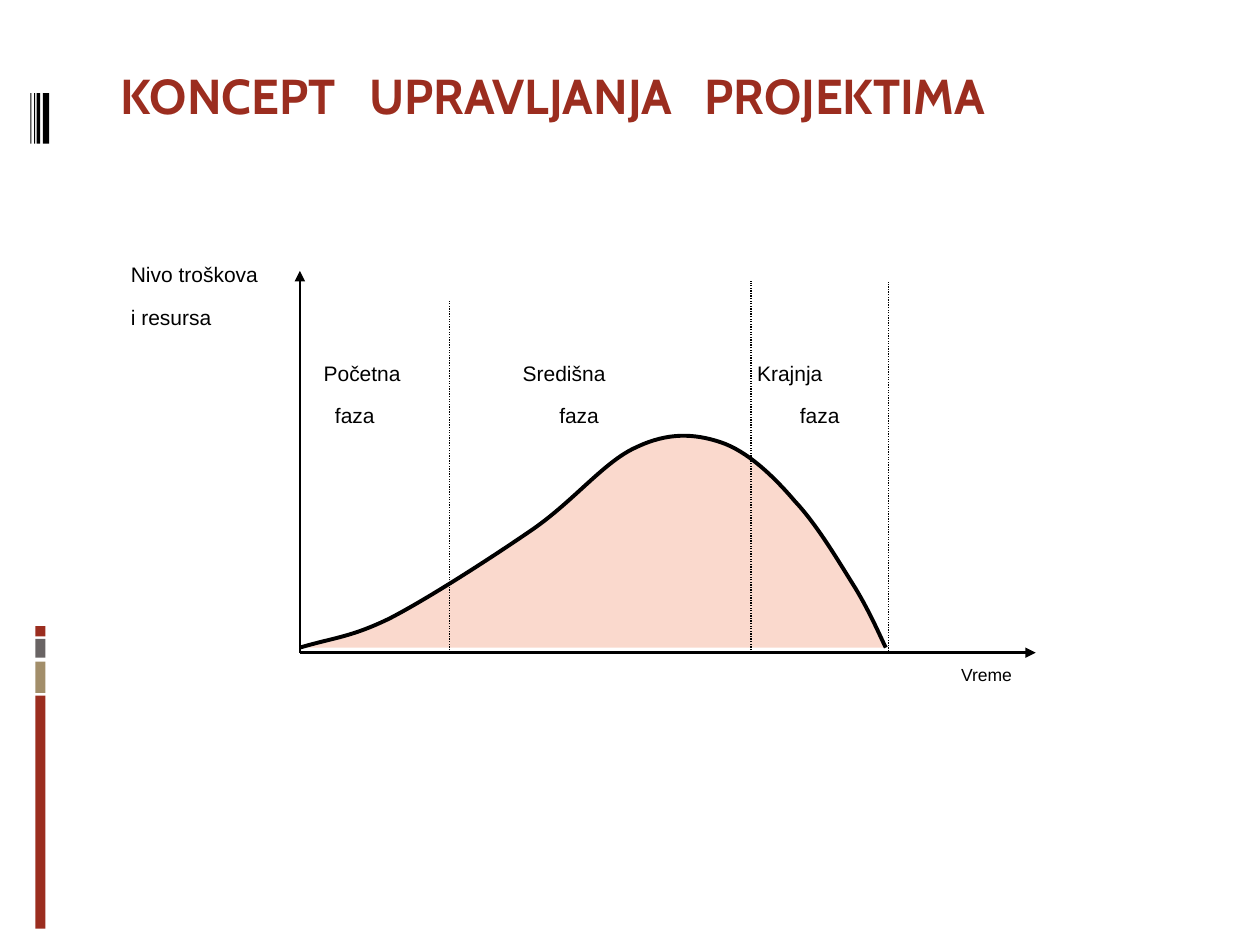
from lxml import etree
from pptx import Presentation
from pptx.dml.color import RGBColor
from pptx.enum import dml, shapes, text
from pptx.oxml import ns
from pptx.util import Inches, Pt

COLORS = {"red": "9B2D1F", "tan": "A28E6A", "gray": "696464",
          "black": "000000", "peach": "FAD9CD"}


def color(name):
    return RGBColor.from_string(COLORS[name])


def sub(node, tag, **attrs):
    return etree.SubElement(node, ns.qn(tag), **attrs)


class Page:
    font = "Arial"
    head = "Cabin"

    def __init__(self, deck):
        self.slide = deck.slides.add_slide(deck.slide_layouts[5])
        self.items = self.slide.shapes

    def fill_in(self, para, words, size, font, name="black", bold=False, tabs=()):
        para.alignment = text.PP_ALIGN.LEFT
        if tabs:
            stops = sub(para._p.get_or_add_pPr(), "a:tabLst")
            for stop in tabs:
                sub(stops, "a:tab", pos=str(Inches(stop)), algn="l")
        run = para.add_run()
        run.text = words
        run.font.size = Pt(size)
        run.font.name = font
        run.font.bold = bold
        run.font.color.rgb = color(name)

    def title(self, box, words, tabs):
        item = self.items.title
        item.left, item.top, item.width, item.height = map(Inches, box)
        frame = item.text_frame
        frame.auto_size = text.MSO_AUTO_SIZE.NONE
        frame.vertical_anchor = text.MSO_ANCHOR.TOP
        self.fill_in(frame.paragraphs[0], words, 28, self.head, "red", True, tabs)

    def label(self, box, lines, size=12, tabs=()):
        frame = self.items.add_textbox(*map(Inches, box)).text_frame
        frame.word_wrap = True
        for i, words in enumerate(lines):
            para = frame.add_paragraph() if i else frame.paragraphs[0]
            para.space_after = Pt(10)
            self.fill_in(para, words, size, self.font,
                         tabs=tabs[i] if tabs else ())

    def bar(self, box, name):
        item = self.items.add_shape(shapes.MSO_SHAPE.RECTANGLE, *map(Inches, box))
        item.shadow.inherit = False
        item.fill.solid()
        item.fill.fore_color.rgb = color(name)
        item.line.fill.background()

    def line(self, start, end, width, arrow=False):
        item = self.items.add_connector(
            shapes.MSO_CONNECTOR.STRAIGHT, *map(Inches, start + end))
        item.line.color.rgb = color("black")
        item.line.width = Pt(width)
        if arrow:
            sub(item.line._get_or_add_ln(), "a:tailEnd", type="triangle")
        else:
            item.line.dash_style = dml.MSO_LINE.ROUND_DOT
        sub(item._element.spPr, "a:effectLst")

    def curve(self, points):
        """Draw cubic Béziers: a start, then three points per segment."""
        spots = [(Inches(x), Inches(y)) for x, y in points]
        build = self.items.build_freeform(*spots[0])
        build.add_line_segments(spots[1:], close=False)
        item = build.convert_to_shape()
        steps = item._element.findall(".//" + ns.qn("a:lnTo"))
        for i in range(0, len(steps), 3):
            cubic = sub(steps[i].getparent(), "a:cubicBezTo")
            for step in steps[i:i + 3]:
                cubic.append(step[0])
                step.getparent().remove(step)
        item.shadow.inherit = False
        item.fill.solid()
        item.fill.fore_color.rgb = color("peach")
        item.line.color.rgb = color("black")
        item.line.width = Pt(2.25)


def main():
    deck = Presentation()
    deck.slide_width, deck.slide_height = Inches(10), Inches(7.5)
    page = Page(deck)

    # Side decoration
    for top, high, name in ((5.52, 1.85, "red"), (5.25, 0.25, "tan"),
                            (5.07, 0.15, "gray"), (4.97, 0.08, "red")):
        page.bar((0.28, top, 0.08, high), name)
    for left, wide in ((0.34, 0.05), (0.29, 0.03), (0.27, 0.01), (0.24, 0.01)):
        page.bar((left, 0.74, wide, 0.4), "black")

    # Title
    page.title((0.86, 0.47, 8.5, 1), "KONCEPT\tUPRAVLJANJA\tPROJEKTIMA",
               (1.97, 4.63))

    # Axes
    zero = (2.38, 5.18)
    page.line(zero, (8.22, 5.18), 1.5, arrow=True)
    page.line(zero, (2.38, 2.15), 1.5, arrow=True)

    # Cost curve
    page.curve([
        (2.38, 5.14),
        (2.65, 5.06), (2.78, 5.06), (3.09, 4.91),
        (3.4, 4.75), (3.91, 4.42), (4.23, 4.2),
        (4.56, 3.97), (4.8, 3.66), (5.05, 3.55),
        (5.3, 3.43), (5.51, 3.44), (5.72, 3.51),
        (5.93, 3.58), (6.14, 3.78), (6.31, 3.98),
        (6.49, 4.17), (6.67, 4.48), (6.79, 4.67),
        (6.91, 4.87), (6.99, 5.06), (7.03, 5.14)])

    # Phase limits
    for x, low, top in ((3.57, 5.18, 2.39), (5.96, 5.18, 2.23), (7.05, 5.19, 2.24)):
        page.line((x, low), (x, top), 0.75)

    # Labels
    page.label((2.42, 2.81, 4.99, 0.79),
               ("\tPočetna\tSredišna\tKrajnja", "\tfaza\tfaza\tfaza"),
               tabs=((0.05, 1.63, 3.49), (0.14, 1.92, 3.83)))
    page.label((7.53, 5.22, 0.9, 0.4), ("Vreme",), 10)
    page.label((0.94, 2.03, 1.51, 0.63), ("Nivo troškova", "i resursa"))

    deck.save("out.pptx")


if __name__ == "__main__":
    main()
